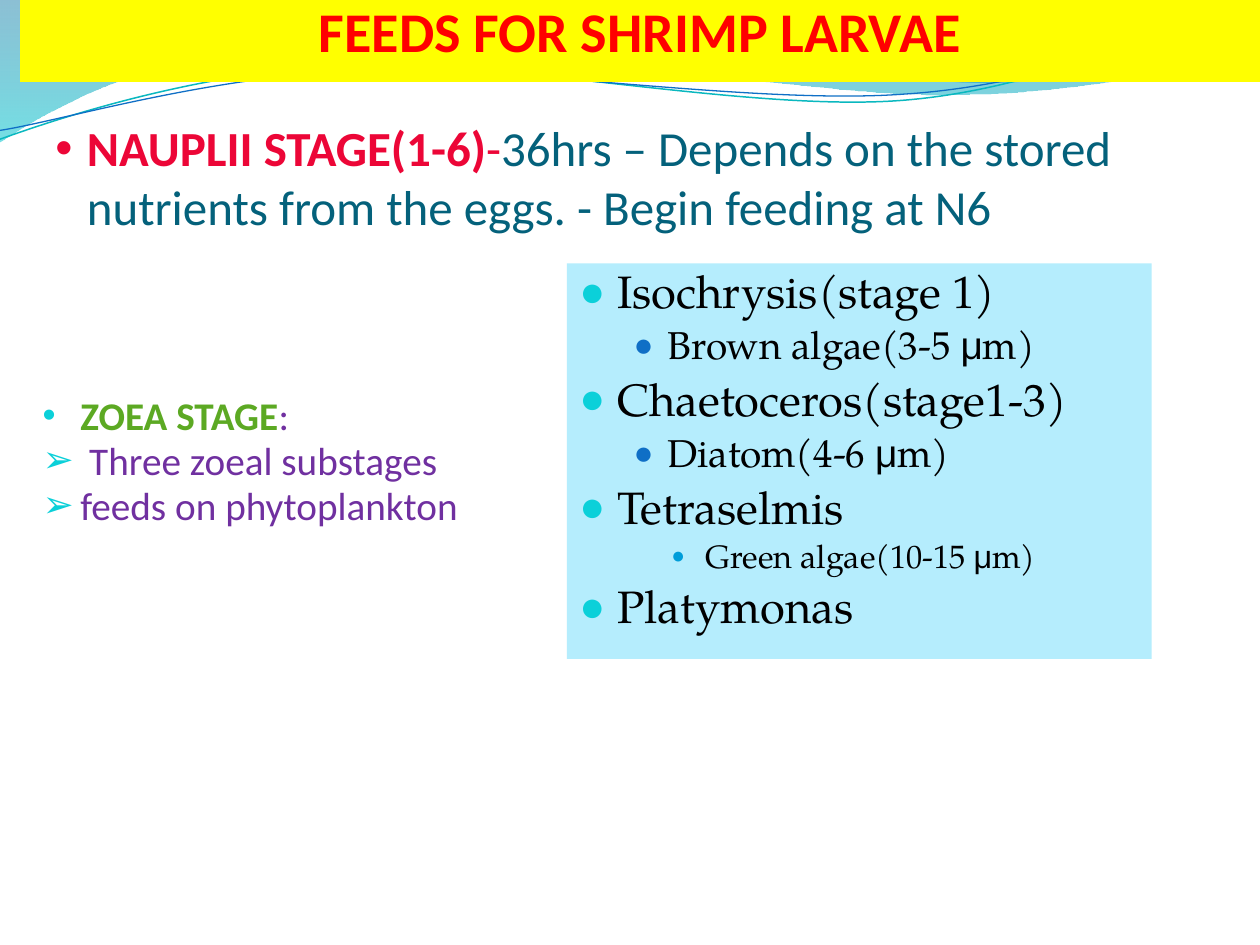
from lxml import etree
from pptx import Presentation
from pptx.dml.color import RGBColor
from pptx.enum.shapes import MSO_SHAPE
from pptx.enum.text import MSO_ANCHOR, PP_ALIGN
from pptx.oxml.ns import qn
from pptx.util import Inches, Pt

RECTANGLE = MSO_SHAPE.RECTANGLE
TOP, BOTTOM = MSO_ANCHOR.TOP, MSO_ANCHOR.BOTTOM
LEFT, CENTER = PP_ALIGN.LEFT, PP_ALIGN.CENTER
color = RGBColor.from_string


def draw_curve(shapes, start, segments, closed):
    """Draw an outline in inches; a segment is a line (x, y) or a cubic curve of six values."""
    points = [(Inches(x), Inches(y)) for segment in segments
              for x, y in zip(segment[::2], segment[1::2])]
    builder = shapes.build_freeform(Inches(start[0]), Inches(start[1]))
    builder.add_line_segments(points, close=closed)
    curve = builder.convert_to_shape()
    curve.shadow.inherit = False
    corners = iter(list(curve._element.iter(qn("a:lnTo"))))
    for segment in segments:
        corner = next(corners)
        if len(segment) == 6:
            bezier = etree.Element(qn("a:cubicBezTo"))
            corner.addprevious(bezier)
            for node in (corner, next(corners), next(corners)):
                bezier.append(node[0])
                node.getparent().remove(node)
    return curve


def add_paragraph(frame, index, spans, margin, indent, bullet=None, spacing=None, gap=0):
    """Add spans of (text, size, font, colour, bold); bullet is (sign, colour, percent)."""
    para = frame.paragraphs[0] if index == 0 else frame.add_paragraph()
    para.alignment = LEFT if bullet else CENTER
    para.space_before = Pt(gap)
    if spacing:
        para.line_spacing = spacing
    properties = para._p.get_or_add_pPr()
    properties.set("marL", str(Inches(margin)))
    properties.set("indent", str(Inches(indent)))
    if bullet:
        sign, bullet_color, percent = bullet
        holder = etree.SubElement(properties, qn("a:buClr"))
        etree.SubElement(holder, qn("a:srgbClr"), val=bullet_color)
        etree.SubElement(properties, qn("a:buSzPct"), val=str(percent * 1000))
        etree.SubElement(properties, qn("a:buFont"), typeface="Arial")
        etree.SubElement(properties, qn("a:buChar"), char=sign)
    for text, size, font, text_color, bold in spans:
        span = para.add_run()
        span.text = text
        span.font.size = Pt(size)
        span.font.name = font
        span.font.bold = bold
        span.font.color.rgb = color(text_color)


deck = Presentation()
deck.slide_width, deck.slide_height = Inches(10), Inches(7.5)
page = deck.slides.add_slide(deck.slide_layouts[6])

# Header waves: start, segments, gradient stops (position, colour, opacity percent)
waves = [
    ((0, 0), [(4.4, -0.01), (4.76, 0.17, 6.64, 0.63, 7.58, 0.63),
              (8.53, 0.63, 9.58, 0.26, 10, 0.09), (10.01, 0.36),
              (9.83, 0.44, 8.7, 0.76, 7.46, 0.75), (6.22, 0.75, 3.82, 0.28, 2.57, 0.34),
              (1.29, 0.36, 0.46, 0.83, -0.01, 1.13), (0, 0)],
     [(0, "0074A1", 45), (1, "00C6CF", 55)]),
    ((4.79, -0.01), [(5.09, 0.11, 6.82, 0.62, 7.69, 0.65),
                     (8.56, 0.69, 9.61, 0.32, 10, 0.21), (10, 0), (4.79, -0.01)],
     [(0, "00A1A9", 30), (0.8, "008BBF", 45)]),
]
for start, segments, stops in waves:
    wave = draw_curve(page.shapes, start, segments, True)
    wave.line.fill.background()
    wave.fill.gradient()
    wave.fill.gradient_angle = 270
    for stop, (position, stop_color, opacity) in zip(wave.fill.gradient_stops, stops):
        stop.position = position
        stop.color.rgb = color(stop_color)
    gradient = wave._element.spPr.find(qn("a:gradFill"))
    for node, (position, stop_color, opacity) in zip(gradient.iter(qn("a:srgbClr")), stops):
        etree.SubElement(node, qn("a:alpha"), val=str(opacity * 1000))

# Thin strands, drawn level and then tilted
strands = [
    ((-0.02, 0.87), [(0.47, 0.72, 1.58, 0.41, 2.78, 0.41), (3.96, 0.42, 5.91, 0.93, 7.12, 0.9),
                     (8.32, 0.87, 9.4, 0.36, 10, 0.22)], "0AB8BF", 0.85),
    ((-0.02, 0.8), [(0.46, 0.75, 1.64, 0.45, 2.83, 0.46), (4.04, 0.47, 5.96, 0.88, 7.16, 0.85),
                    (8.35, 0.83, 9.42, 0.42, 10.01, 0.3)], "0F6FC6", 0.75),
]
strand_group = page.shapes.add_group_shape()
for start, segments, line_color, width in strands:
    strand = draw_curve(strand_group.shapes, start, segments, False)
    strand.rotation = 357.3
    strand.fill.background()
    strand.line.color.rgb = color(line_color)
    strand.line.width = Pt(width)

# Text boxes: left, top, width, height, fill
frames = []
for left, top, width, height, fill in [
    (0.16, -0.08, 9.84, 0.73, "FFFF00"),
    (0.44, 0.93, 9.41, 0.94, None),
    (0.24, 3.13, 9.27, 1.17, None),
    (4.5, 2.09, 4.64, 3.14, "B5EDFD"),
]:
    place = Inches(left), Inches(top), Inches(width), Inches(height)
    if fill:
        box = page.shapes.add_shape(RECTANGLE, *place)
        box.shadow.inherit = False
        box.fill.solid()
        box.fill.fore_color.rgb = color(fill)
        box.line.fill.background()
    else:
        box = page.shapes.add_textbox(*place)
    box.text_frame.word_wrap = True
    box.text_frame.vertical_anchor = TOP
    frames.append(box.text_frame)
title, nauplii, zoea, algae = frames

add_paragraph(title, 0, [("FEEDS FOR SHRIMP LARVAE", 32, "Calibri", "FF0000", True)], 0.3, -0.3)

nauplii.vertical_anchor = BOTTOM
nauplii.margin_left = nauplii.margin_right = nauplii.margin_bottom = 0
add_paragraph(nauplii, 0, [
    ("NAUPLII STAGE(1-6)", 28, "Calibri", "EC0637", True),
    ("-", 28, "Calibri", "EC0637", False),
    ("36hrs – Depends on the stored nutrients from the eggs. - Begin feeding at N6",
     28, "Calibri", "04617B", False),
], 0.25, -0.25, ("•", "EC0637", 100))

zoea_lines = [
    ("•", [("ZOEA STAGE", "5CA923", True), (":", "7030A0", False)]),
    ("➢", [(" Three zoeal substages", "7030A0", False)]),
    ("➢", [("feeds on phytoplankton", "7030A0", False)]),
]
for index, (sign, parts) in enumerate(zoea_lines):
    spans = [(text, 22.4, "Calibri", text_color, bold) for text, text_color, bold in parts]
    add_paragraph(zoea, index, spans, 0.3, -0.3, (sign, "0BD0D9", 95), 0.8, 4.2)

# Outline levels: size, margin, indent, bullet colour, bullet percent
levels = [
    (25.9, 0.3, -0.3, "0BD0D9", 95),
    (22.2, 0.7, -0.27, "0F6FC6", 85),
    (18.5, 1, -0.27, "009DD9", 70),
]
algae_lines = [
    (0, "Isochrysis(stage 1)"), (1, "Brown algae(3-5 μm)"),
    (0, "Chaetoceros(stage1-3)"), (1, "Diatom(4-6 μm)"),
    (0, "Tetraselmis"), (2, "Green algae(10-15 μm)"),
    (0, "Platymonas"),
]
for index, (level, line) in enumerate(algae_lines):
    size, margin, indent, bullet_color, percent = levels[level]
    spans = [(text, size, "Arial" if text == "μ" else "TeX Gyre Pagella", "000000", False)
             for text in line.partition("μ") if text]
    add_paragraph(algae, index, spans, margin, indent, ("●", bullet_color, percent),
                  0.9, 0.2 * size)
    algae.paragraphs[index].level = level

deck.save("out.pptx")
